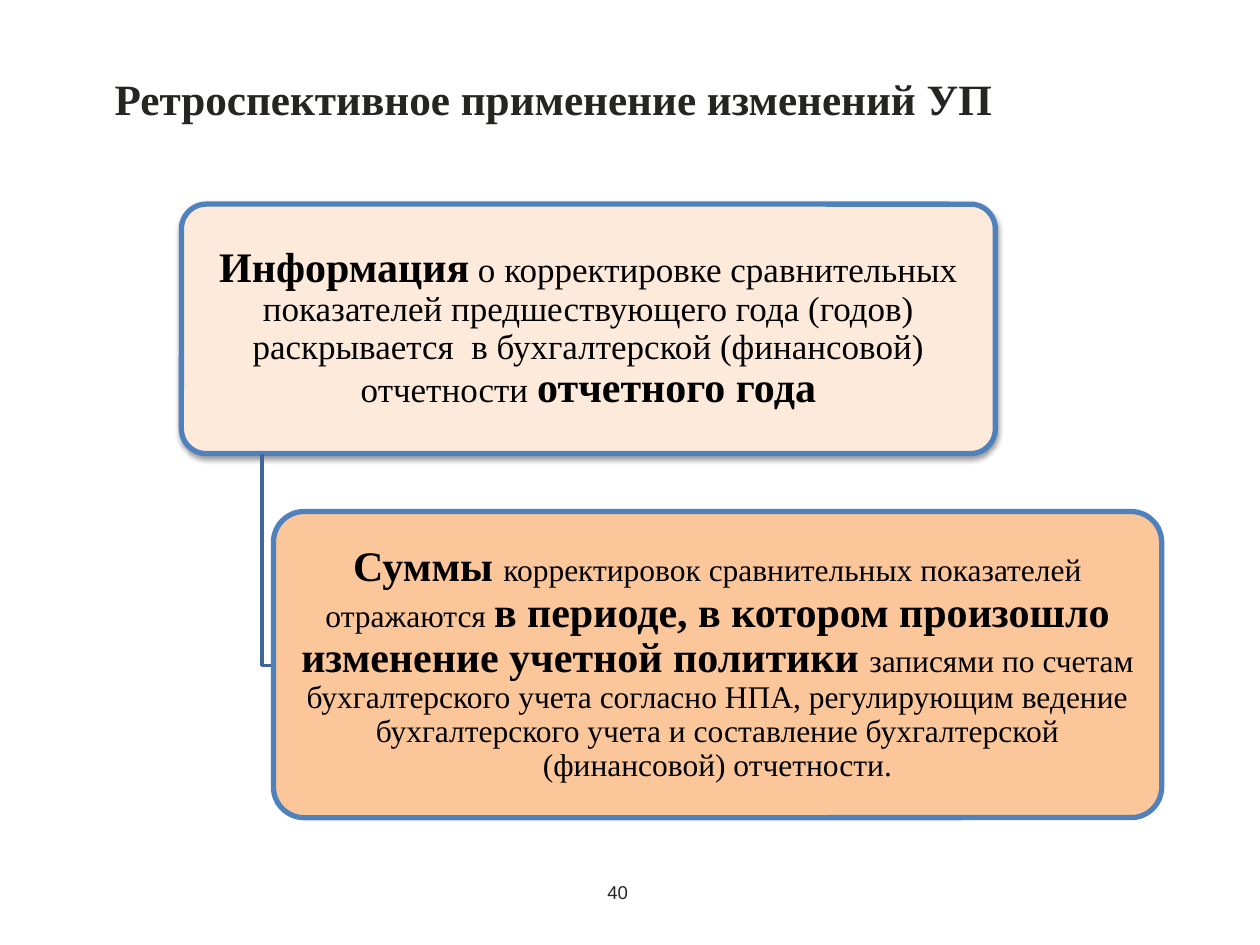
from lxml import etree
from pptx import Presentation
from pptx.dml.color import RGBColor
from pptx.enum.shapes import MSO_SHAPE
from pptx.enum.text import MSO_ANCHOR, PP_ALIGN
from pptx.oxml import parse_xml
from pptx.oxml.ns import nsdecls, qn
from pptx.util import Inches, Pt

INK = RGBColor(0x25, 0x25, 0x23)
BLACK = RGBColor(0, 0, 0)
PEACH = RGBColor(0xFD, 0xEA, 0xDA)
ORANGE = RGBColor(0xFA, 0xC0, 0x90)
BLUE = RGBColor(0x4F, 0x81, 0xBD)
DARK_BLUE = RGBColor(0x3F, 0x67, 0x97)


class SlideBuilder:
    serif = "Times New Roman"
    sans = "Arial"
    strong_size = 24

    def __init__(self, slide):
        self.slide = slide

    def set_font(self, font, name, size, color, bold=False):
        font.name, font.size, font.bold = name, Pt(size), bold
        font.color.rgb = color

    def set_insets(self, tf, x, y):
        tf.margin_left = tf.margin_right = Inches(x)
        tf.margin_top = tf.margin_bottom = Inches(y)
        tf.word_wrap = True

    def label(self, box, text, name, size, bold=False, indent=0):
        tb = self.slide.shapes.add_textbox(*map(Inches, box))
        self.set_insets(tb.text_frame, 0, 0)
        p = tb.text_frame.paragraphs[0]
        p.text = text
        self.set_font(p.font, name, size, INK, bold)
        if indent:
            p._p.get_or_add_pPr().set("marL", str(Inches(indent)))
        return p

    def card(self, box, fill, parts, size, alpha=None, shadow=False):
        """Rounded card; parts are (text, strong) pairs."""
        sp = self.slide.shapes.add_shape(MSO_SHAPE.ROUNDED_RECTANGLE, *map(Inches, box))
        sp.adjustments[0] = 0.1
        sp.shadow.inherit = False
        sp.fill.solid()
        sp.fill.fore_color.rgb = fill
        sp.line.color.rgb = BLUE
        sp.line.width = Pt(3)
        if alpha:
            color = sp._element.spPr.find(qn("a:solidFill"))[0]
            etree.SubElement(color, qn("a:alpha")).set("val", str(alpha * 1000))
        if shadow:
            sp._element.spPr.find(qn("a:effectLst")).append(parse_xml(
                f'<a:outerShdw {nsdecls("a")} blurRad="{Pt(3.1)}" dist="{Pt(1.6)}"'
                ' dir="5400000" rotWithShape="0"><a:srgbClr val="000000">'
                '<a:alpha val="38000"/></a:srgbClr></a:outerShdw>'))

        tf = sp.text_frame
        self.set_insets(tf, 0.06, 0.04)
        tf.vertical_anchor = MSO_ANCHOR.MIDDLE
        p = tf.paragraphs[0]
        p.alignment = PP_ALIGN.CENTER
        p.line_spacing = 0.9
        for text, strong in parts:
            r = p.add_run()
            r.text = text
            self.set_font(r.font, self.serif, self.strong_size if strong else size,
                          BLACK, strong)

    def elbow(self, points):
        start, *rest = [(Inches(x), Inches(y)) for x, y in points]
        builder = self.slide.shapes.build_freeform(*start)
        builder.add_line_segments(rest, close=False)
        sp = builder.convert_to_shape()
        sp.shadow.inherit = False
        sp.fill.background()
        sp.line.color.rgb = DARK_BLUE
        sp.line.width = Pt(2)


def main():
    prs = Presentation()
    prs.slide_width, prs.slide_height = Inches(10), Inches(7.5)
    s = SlideBuilder(prs.slides.add_slide(prs.slide_layouts[6]))

    # Title
    s.label((0.91, 0.57, 8.63, 0.42), "Ретроспективное применение изменений УП",
            s.serif, 24.7, bold=True)

    # Main card, branch line and detail card
    s.card((1.44, 1.62, 6.46, 1.98), PEACH, [
        ("Информация", True),
        (" о корректировке сравнительных показателей предшествующего года (годов) "
         "раскрывается  в бухгалтерской (финансовой) отчетности ", False),
        ("отчетного года", True),
    ], size=20, shadow=True)
    s.elbow([(2.08, 3.6), (2.08, 5.28), (2.17, 5.28)])
    s.card((2.17, 4.06, 7.05, 2.43), ORANGE, [
        ("Суммы ", True),
        ("корректировок сравнительных показателей отражаются ", False),
        ("в периоде, в котором произошло изменение учетной политики ", True),
        ("записями по счетам бухгалтерского учета согласно НПА, регулирующим ведение "
         "бухгалтерского учета и составление бухгалтерской (финансовой) отчетности.", False),
    ], size=18, alpha=90)

    # Page number
    p = s.label((0.08, 7.01, 5.16, 0.17), "40", s.sans, 10.6, indent=4.74)
    p.line_spacing = Pt(11.6)

    prs.save("out.pptx")


if __name__ == "__main__":
    main()
